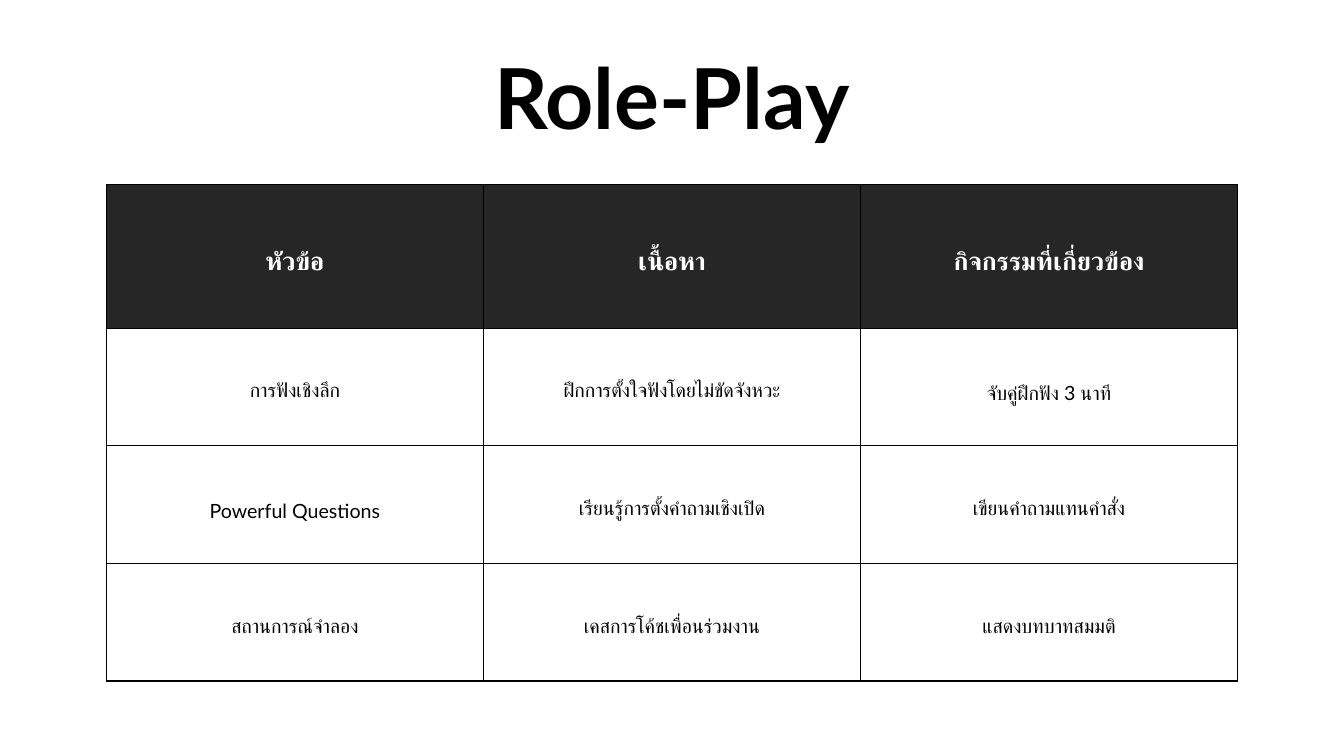
from pptx import Presentation
from pptx.dml.color import RGBColor
from pptx.enum.text import MSO_ANCHOR, MSO_AUTO_SIZE, PP_ALIGN
from pptx.util import Pt
from lxml.etree import fromstring

# Content
TITLE = "Role-Play"
ROWS = [
    ("หัวข้อ", "เนื้อหา", "กิจกรรมที่เกี่ยวข้อง"),
    ("การฟังเชิงลึก", "ฝึกการตั้งใจฟังโดยไม่ขัดจังหวะ", "จับคู่ฝึกฟัง 3 นาที"),
    ("Powerful Questions", "เรียนรู้การตั้งคำถามเชิงเปิด", "เขียนคำถามแทนคำสั่ง"),
    ("สถานการณ์จำลอง", "เคสการโค้ชเพื่อนร่วมงาน", "แสดงบทบาทสมมติ"),
]

# Style and layout, in points
COLORS = {"ink": "000000", "header": "262626", "paper": "FFFFFF"}
FONT = "Lato"
SLIDE_W, SLIDE_H = 960, 540
TABLE_W, TABLE_TOP = 808, 132
HEADER_H, ROW_H = 102.5, 84
BORDER = 1
NS = "http://schemas.openxmlformats.org/drawingml/2006/main"


def color(name):
    return RGBColor.from_string(COLORS[name])


def style_text(p, size, ink, bold):
    p.alignment = PP_ALIGN.CENTER
    p.font.name, p.font.size, p.font.bold = FONT, Pt(size), bold
    p.font.color.rgb = color(ink)


def add_borders(cell):
    tcPr = cell._tc.get_or_add_tcPr()
    for i, side in enumerate(("lnL", "lnR", "lnT", "lnB")):
        tcPr.insert(i, fromstring(
            f'<a:{side} xmlns:a="{NS}" w="{Pt(BORDER)}"><a:solidFill>'
            f'<a:srgbClr val="{COLORS["ink"]}"/></a:solidFill></a:{side}>'))


prs = Presentation()
prs.slide_width, prs.slide_height = Pt(SLIDE_W), Pt(SLIDE_H)
s = prs.slides.add_slide(prs.slide_layouts[5])

# Title
title = s.shapes.title
title.left, title.top, title.width, title.height = Pt(0), Pt(28.8), Pt(SLIDE_W), Pt(80)
tf = title.text_frame
tf.text = TITLE
tf.auto_size = MSO_AUTO_SIZE.SHAPE_TO_FIT_TEXT
tf.vertical_anchor = MSO_ANCHOR.TOP
style_text(tf.paragraphs[0], 60, "ink", True)

# Table
heights = [HEADER_H] + [ROW_H] * (len(ROWS) - 1)
table = s.shapes.add_table(
    len(ROWS), len(ROWS[0]), Pt((SLIDE_W - TABLE_W) / 2), Pt(TABLE_TOP),
    Pt(TABLE_W), Pt(sum(heights))).table
table.horz_banding = False
for r, texts in enumerate(ROWS):
    table.rows[r].height = Pt(heights[r])
    is_header = r == 0
    for c, text in enumerate(texts):
        cell = table.cell(r, c)
        cell.text = text
        cell.vertical_anchor = MSO_ANCHOR.MIDDLE
        p = cell.text_frame.paragraphs[0]
        p.line_spacing = 1.5
        if is_header:
            cell.fill.solid()
            cell.fill.fore_color.rgb = color("header")
            style_text(p, 18, "paper", True)
        else:
            cell.fill.background()
            style_text(p, 14, "ink", False)
        add_borders(cell)

prs.save("out.pptx")
